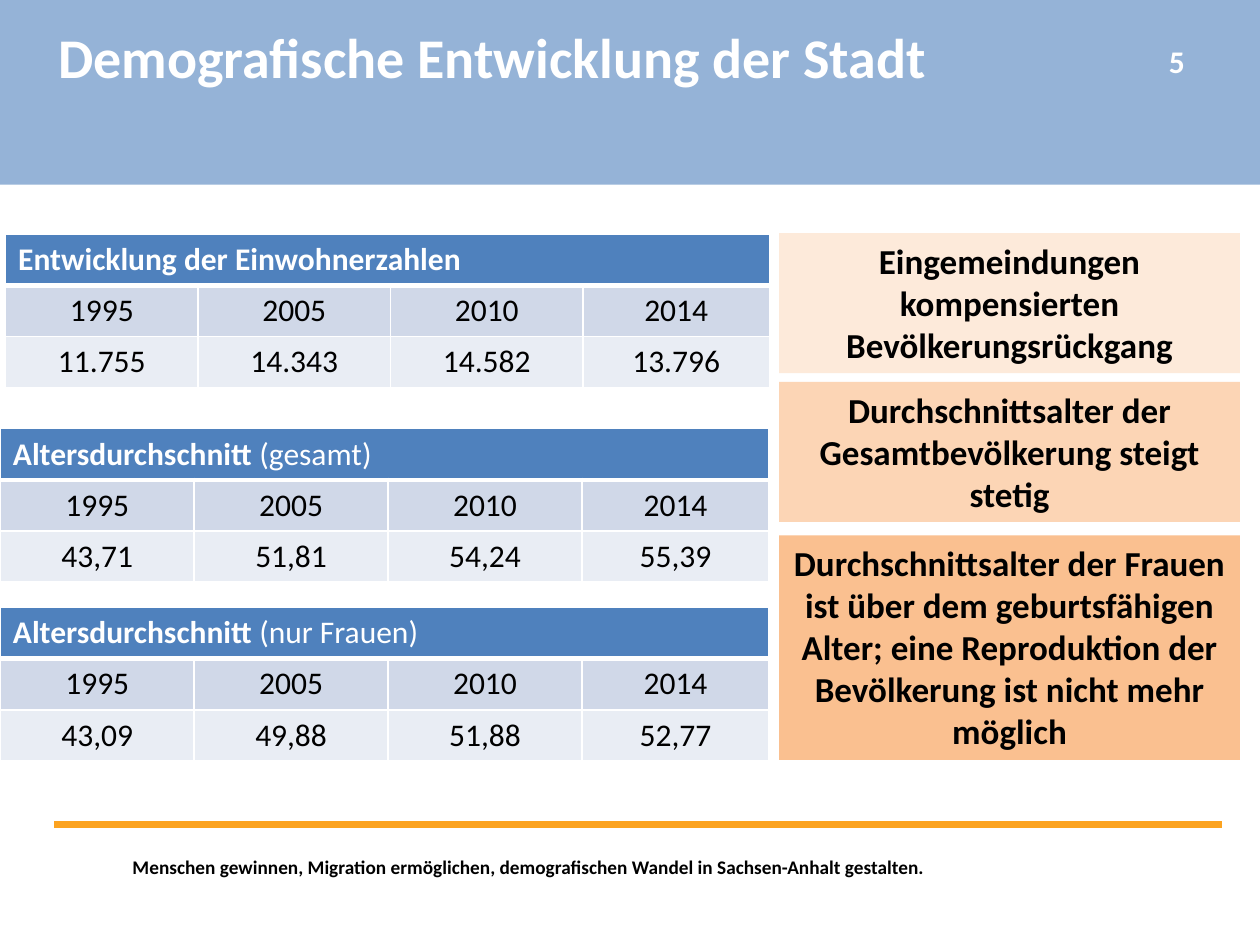
from lxml import etree
from pptx import Presentation
from pptx.dml.color import RGBColor
from pptx.enum.shapes import MSO_CONNECTOR, MSO_SHAPE
from pptx.enum.text import MSO_ANCHOR, MSO_AUTO_SIZE, PP_ALIGN
from pptx.oxml.ns import qn
from pptx.util import Pt

WHITE = RGBColor(0xFF, 0xFF, 0xFF)
BLACK = RGBColor(0x00, 0x00, 0x00)
BAND = RGBColor(0x95, 0xB3, 0xD7)
ORANGE = RGBColor(0xFC, 0xA3, 0x20)
HEADER = RGBColor(0x4F, 0x81, 0xBD)
YEAR_ROW = RGBColor(0xD0, 0xD8, 0xE8)
VALUE_ROW = RGBColor(0xE9, 0xED, 0xF4)
PEACH_LIGHT = RGBColor(0xFD, 0xEA, 0xDA)
PEACH = RGBColor(0xFC, 0xD5, 0xB5)
PEACH_DARK = RGBColor(0xFA, 0xC0, 0x90)


def write(tf, text, size=18, color=BLACK, bold=False, align=PP_ALIGN.CENTER,
          anchor=MSO_ANCHOR.TOP, wrap=True):
    """Add one formatted run to the first paragraph of a text frame."""
    tf.word_wrap = wrap
    tf.vertical_anchor = anchor
    p = tf.paragraphs[0]
    p.alignment = align
    r = p.add_run()
    r.text = text
    r.font.name = "Calibri"
    r.font.size = Pt(size)
    r.font.bold = bold
    r.font.color.rgb = color


def add_border(cell, side, width):
    """Give one side (L, R, T or B) of a table cell a white line."""
    tcPr = cell._tc.get_or_add_tcPr()
    ln = etree.SubElement(tcPr, qn(f"a:ln{side}"), w=str(Pt(width)))
    fill = etree.SubElement(ln, qn("a:solidFill"))
    etree.SubElement(fill, qn("a:srgbClr"), val=str(WHITE))


prs = Presentation()
prs.slide_width, prs.slide_height = Pt(720), Pt(540)
s = prs.slides.add_slide(prs.slide_layouts[5])

# Orange rule above the footer
rule = s.shapes.add_connector(MSO_CONNECTOR.STRAIGHT, Pt(31), Pt(471), Pt(698.4), Pt(471))
rule.line.color.rgb = ORANGE
rule.line.width = Pt(4)
etree.SubElement(rule._element.spPr, qn("a:effectLst"))

# Title band
band = s.shapes.add_shape(MSO_SHAPE.RECTANGLE, 0, 0, Pt(720), Pt(105.6))
band.shadow.inherit = False
band.fill.solid()
band.fill.fore_color.rgb = BAND
band.line.fill.background()

# Title, placed in front of the band
title = s.shapes.title
band._element.addnext(title._element)
title.left, title.top, title.width, title.height = Pt(26), Pt(9.4), Pt(515.5), Pt(46)
title.text_frame.auto_size = MSO_AUTO_SIZE.NONE
write(title.text_frame, "Demografische Entwicklung der Stadt", size=32, color=WHITE,
      bold=True, align=PP_ALIGN.LEFT, wrap=False)

# Footer and slide number
footer = s.shapes.add_textbox(Pt(21.5), Pt(485.3), Pt(563.8), Pt(34))
write(footer.text_frame,
      "Menschen gewinnen, Migration ermöglichen, demografischen Wandel in Sachsen-Anhalt gestalten. ",
      size=11, bold=True)
number = s.shapes.add_textbox(Pt(643.7), Pt(20.2), Pt(57.6), Pt(28.8))
write(number.text_frame, "5", color=WHITE, bold=True, anchor=MSO_ANCHOR.MIDDLE)

# Tables: left, top, year column width, last column width, heading, note, values
YEARS = ["1995", "2005", "2010", "2014"]
TABLES = [
    (3.2, 134, 110, 106.5, "Entwicklung der Einwohnerzahlen", "",
     ["11.755", "14.343", "14.582", "13.796"]),
    (0.2, 245, 110.8, 107, "Altersdurchschnitt ", "(gesamt)",
     ["43,71", "51,81", "54,24", "55,39"]),
    (0.2, 347.2, 110.8, 107, "Altersdurchschnitt ", "(nur Frauen)",
     ["43,09", "49,88", "51,88", "52,77"]),
]
ROW_HEIGHT = 29.2
for left, top, col_width, last_width, heading, note, values in TABLES:
    widths = [col_width] * 3 + [last_width]
    table = s.shapes.add_table(3, 4, Pt(left), Pt(top), Pt(sum(widths)),
                               Pt(3 * ROW_HEIGHT)).table
    for column, width in zip(table.columns, widths):
        column.width = Pt(width)
    for i, (row, color) in enumerate(zip(table.rows, [HEADER, YEAR_ROW, VALUE_ROW])):
        row.height = Pt(ROW_HEIGHT)
        for cell in row.cells:
            for side in "LRTB":
                heavy = (i, side) in [(0, "B"), (1, "T")]
                add_border(cell, side, 3 if heavy else 1)
            cell.fill.solid()
            cell.fill.fore_color.rgb = color
    table.cell(0, 0).merge(table.cell(0, 3))
    header = table.cell(0, 0).text_frame
    write(header, heading, color=WHITE, bold=True, align=PP_ALIGN.LEFT)
    if note:
        write(header, note, color=WHITE, align=PP_ALIGN.LEFT)
    for c, (year, value) in enumerate(zip(YEARS, values)):
        write(table.cell(1, c).text_frame, year)
        write(table.cell(2, c).text_frame, value)

# Conclusions beside the tables
CONCLUSIONS = [
    (133.3, 80, PEACH_LIGHT, "Eingemeindungen kompensierten Bevölkerungsrückgang"),
    (218.3, 80, PEACH, "Durchschnittsalter der Gesamtbevölkerung steigt stetig"),
    (306, 128.3, PEACH_DARK, "Durchschnittsalter der Frauen ist über dem geburtsfähigen Alter; "
     "eine Reproduktion der Bevölkerung ist nicht mehr möglich"),
]
for top, height, color, text in CONCLUSIONS:
    sp = s.shapes.add_shape(MSO_SHAPE.RECTANGLE, Pt(445.2), Pt(top), Pt(263.4), Pt(height))
    sp.shadow.inherit = False
    sp.fill.solid()
    sp.fill.fore_color.rgb = color
    sp.line.fill.background()
    write(sp.text_frame, text, size=20, bold=True)

prs.save("out.pptx")
